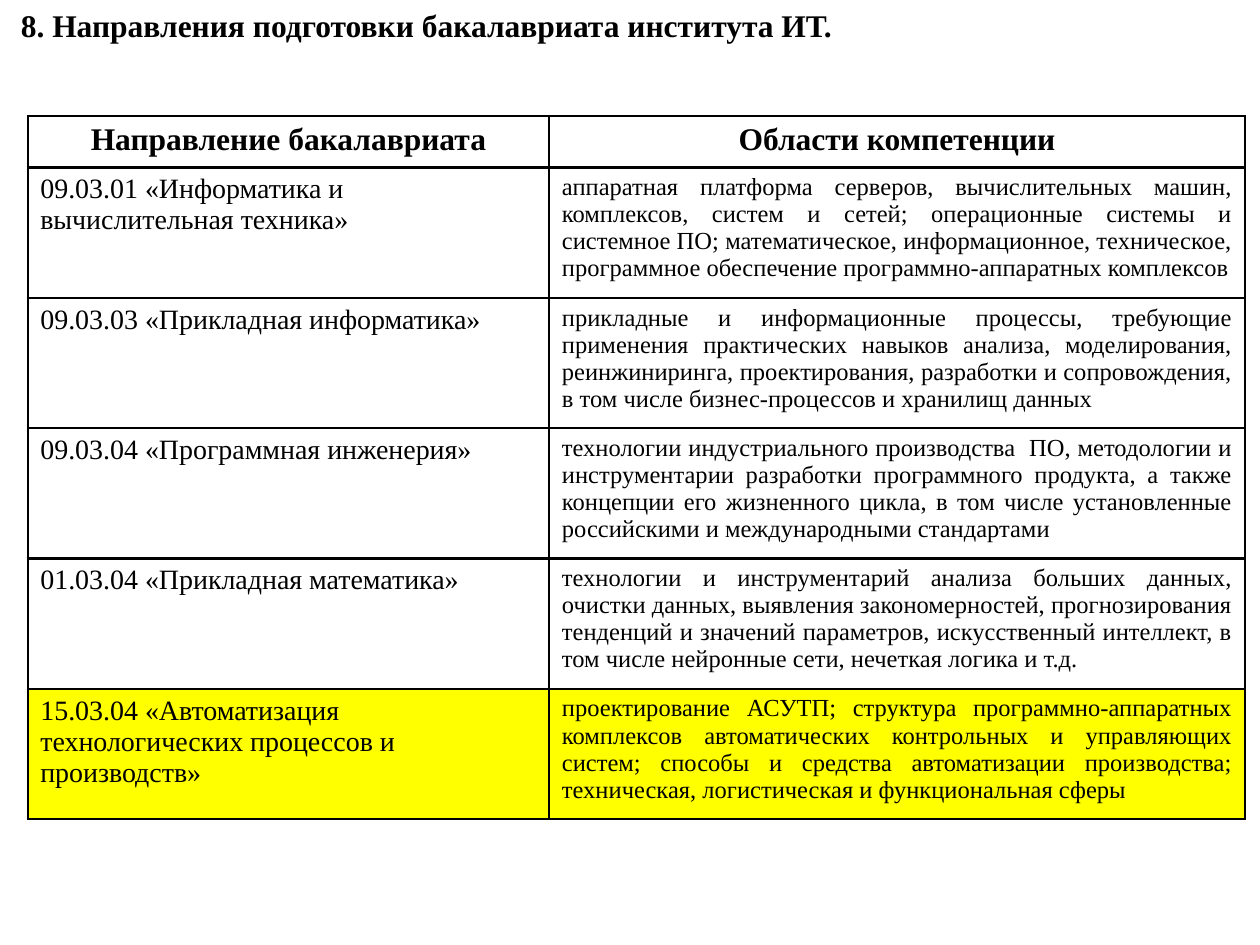
from lxml import etree
from pptx import Presentation
from pptx.dml.color import RGBColor
from pptx.enum.text import MSO_ANCHOR, MSO_AUTO_SIZE, PP_ALIGN
from pptx.oxml.ns import qn
from pptx.util import Inches, Pt

BLACK = RGBColor(0x00, 0x00, 0x00)
WHITE = RGBColor(0xFF, 0xFF, 0xFF)
YELLOW = RGBColor(0xFF, 0xFF, 0x00)
LEFT, CENTER, JUSTIFY = PP_ALIGN.LEFT, PP_ALIGN.CENTER, PP_ALIGN.JUSTIFY
TOP = MSO_ANCHOR.TOP
FIT_SHAPE = MSO_AUTO_SIZE.SHAPE_TO_FIT_TEXT
TITLE_ONLY = 5

TITLE = "8. Направления подготовки бакалавриата института ИТ."
HEADINGS = ("Направление бакалавриата", "Области компетенции")
PROGRAMMES = [
    ("09.03.01 «Информатика и вычислительная техника»",
     "аппаратная платформа серверов, вычислительных машин, комплексов, систем и сетей; "
     "операционные системы и системное ПО; математическое, информационное, техническое, "
     "программное обеспечение программно-аппаратных комплексов"),
    ("09.03.03 «Прикладная информатика»",
     "прикладные и информационные процессы, требующие применения практических навыков "
     "анализа, моделирования, реинжиниринга, проектирования, разработки и сопровождения, "
     "в том числе бизнес-процессов и хранилищ данных"),
    ("09.03.04 «Программная инженерия»",
     "технологии индустриального производства  ПО, методологии и инструментарии разработки "
     "программного продукта, а также концепции его жизненного цикла, в том числе "
     "установленные российскими и международными стандартами"),
    ("01.03.04 «Прикладная математика»",
     "технологии и инструментарий анализа больших данных, очистки данных, выявления "
     "закономерностей, прогнозирования тенденций и значений параметров, искусственный "
     "интеллект, в том числе нейронные сети, нечеткая логика и т.д."),
    ("15.03.04 «Автоматизация технологических процессов и производств»",
     "проектирование АСУТП; структура программно-аппаратных комплексов автоматических "
     "контрольных и управляющих систем; способы и средства автоматизации производства; "
     "техническая, логистическая и функциональная сферы"),
]
HIGHLIGHTED = PROGRAMMES[-1]


def write(frame, text, size, align=LEFT, bold=False, font="Times New Roman", color=BLACK):
    para = frame.paragraphs[0]
    para.alignment = align
    span = para.add_run()
    span.text = text
    span.font.name = font
    span.font.size = Pt(size)
    span.font.bold = bold
    span.font.color.rgb = color


def outline_cell(cell, color=BLACK, width=1.5):
    properties = cell._tc.get_or_add_tcPr()
    for position, side in enumerate(("a:lnL", "a:lnR", "a:lnT", "a:lnB")):
        line = etree.Element(qn(side), w=str(Pt(width)))
        fill = etree.SubElement(line, qn("a:solidFill"))
        etree.SubElement(fill, qn("a:srgbClr"), val=str(color))
        properties.insert(position, line)


class SlideBuilder:
    """Holds the current slide and the text sizes of its elements."""

    heading_size = 18
    column_sizes = (16, 14)
    column_aligns = (LEFT, JUSTIFY)

    def __init__(self, page):
        self.page = page

    def title(self, text, left, top, width, height):
        box = self.page.shapes.title
        box.left, box.top = Inches(left), Inches(top)
        box.width, box.height = Inches(width), Inches(height)
        frame = box.text_frame
        frame.word_wrap = False
        frame.auto_size = FIT_SHAPE
        frame.vertical_anchor = TOP
        write(frame, text, self.heading_size, align=CENTER, bold=True)

    def cell(self, cell, text, fill, **text_format):
        cell.fill.solid()
        cell.fill.fore_color.rgb = fill
        outline_cell(cell)
        write(cell.text_frame, text, **text_format)

    def table(self, left, top, widths, heading_height, row_height):
        heights = [heading_height] + [row_height] * len(PROGRAMMES)
        table = self.page.shapes.add_table(
            len(heights), len(widths), Inches(left), Inches(top),
            Inches(sum(widths)), Inches(sum(heights))).table
        for column, width in zip(table.columns, widths):
            column.width = Inches(width)
        for row, height in zip(table.rows, heights):
            row.height = Inches(height)
        for column, heading in enumerate(HEADINGS):
            self.cell(table.cell(0, column), heading, WHITE,
                      size=self.heading_size, align=CENTER, bold=True)
        for row, programme in enumerate(PROGRAMMES, start=1):
            fill = YELLOW if programme == HIGHLIGHTED else WHITE
            for column, text in enumerate(programme):
                self.cell(table.cell(row, column), text, fill,
                          size=self.column_sizes[column], align=self.column_aligns[column])


def main():
    deck = Presentation()
    deck.slide_width, deck.slide_height = Inches(10), Inches(7.5)
    builder = SlideBuilder(deck.slides.add_slide(deck.slide_layouts[TITLE_ONLY]))
    builder.title(TITLE, 0, 0, 6.77, 0.4)
    builder.table(0.22, 0.92, widths=(4.14, 5.52), heading_height=0.41, row_height=1.03)
    deck.save("out.pptx")


if __name__ == "__main__":
    main()
